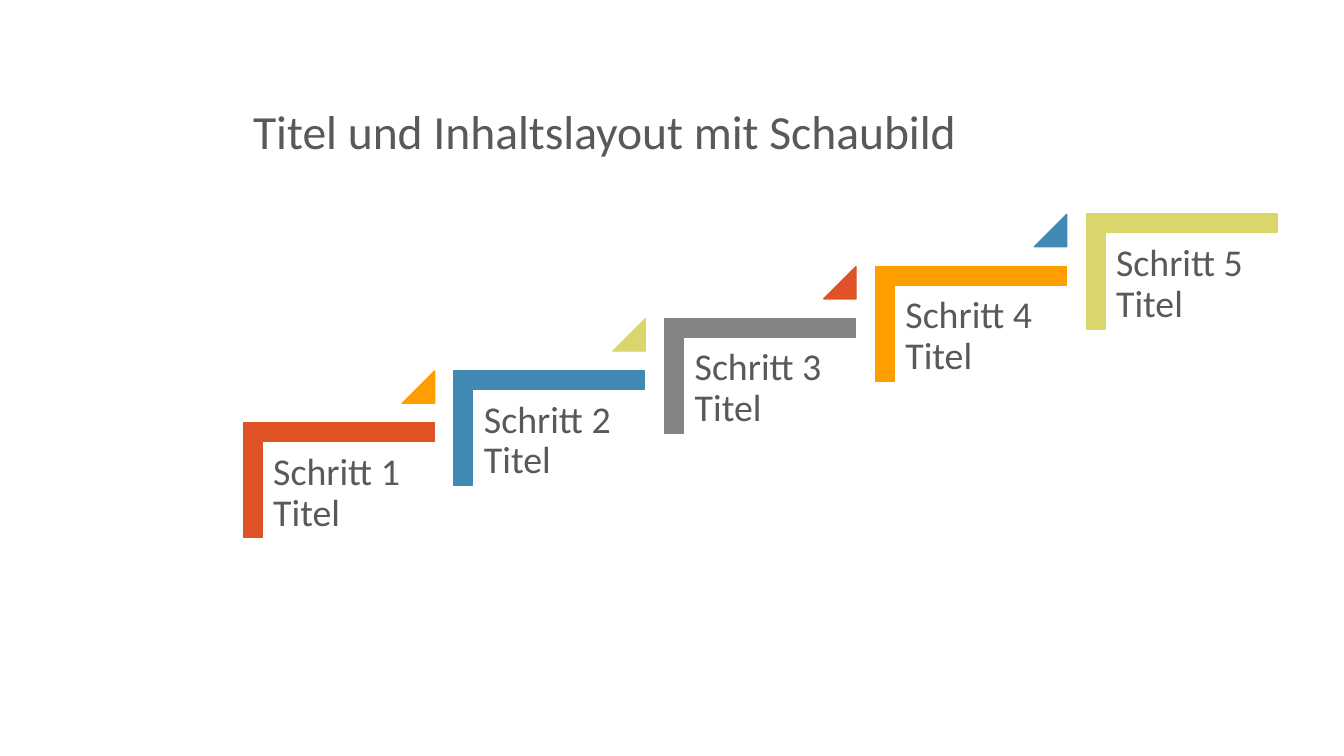
"""Build a slide with five rising diagram steps."""
import dataclasses

import pptx
import pptx.dml.color
import pptx.enum.shapes
import pptx.enum.text
import pptx.util

Inches = pptx.util.Inches
Color = pptx.dml.color.RGBColor.from_string
Shape = pptx.enum.shapes.MSO_SHAPE
Anchor = pptx.enum.text.MSO_ANCHOR


@dataclasses.dataclass(frozen=True)
class Theme:
    font: str = "Calibri"
    ink: str = "595959"
    title: int = 34
    label: int = 27
    steps: tuple = ("DF5327", "418AB3", "838383", "FE9E00", "D9D66D")
    marks: tuple = ("FE9E00", "D9D66D", "DF5327", "418AB3")


theme = Theme()


def write(box, text, size, anchor=Anchor.TOP, side=0.11, edge=0.11):
    frame = box.text_frame
    frame.word_wrap = True
    frame.auto_size = pptx.enum.text.MSO_AUTO_SIZE.NONE
    frame.vertical_anchor = anchor
    frame.margin_left = frame.margin_right = Inches(side)
    frame.margin_top = frame.margin_bottom = Inches(edge)
    para = frame.paragraphs[0]
    para.text = text
    para.alignment = pptx.enum.text.PP_ALIGN.LEFT
    para.line_spacing = 0.9
    for run in para.runs:
        run.font.name = theme.font
        run.font.size = pptx.util.Pt(size)
        run.font.color.rgb = Color(theme.ink)


def draw(group, kind, place, color, adjust):
    shape = group.shapes.add_shape(kind, *map(Inches, place))
    shape.shadow.inherit = False
    shape.fill.solid()
    shape.fill.fore_color.rgb = Color(color)
    shape.line.color.rgb = Color(color)
    shape.line.width = pptx.util.Pt(1)
    for i, value in enumerate(adjust):
        shape.adjustments[i] = value
    return shape


deck = pptx.Presentation()
deck.slide_width, deck.slide_height = Inches(13.33), Inches(7.5)
slide = deck.slides.add_slide(deck.slide_layouts[5])

title = slide.shapes.title
title.left, title.top = Inches(2.41), Inches(0.33)
title.width, title.height = Inches(10.25), Inches(1.31)
write(title, "Titel und Inhaltslayout mit Schaubild", theme.title,
      anchor=Anchor.BOTTOM, side=0.1, edge=0.05)

stairs = slide.shapes.add_group_shape()
run_x = 2.09
rise = (3.82 - 1.75) / 4
for i, color in enumerate(theme.steps):
    dx, dy = i * run_x, i * rise
    corner = draw(stairs, Shape.CORNER, (2.79 + dx, 3.82 - dy, 1.14, 1.89),
                  color, (0.161, 0.161))
    corner.rotation = 90
    label = stairs.shapes.add_textbox(
        Inches(2.6 + dx), Inches(4.38 - dy), Inches(1.71), Inches(1.5))
    write(label, f"Schritt {i + 1}\vTitel", theme.label)
    if i < len(theme.marks):
        draw(stairs, Shape.ISOSCELES_TRIANGLE,
             (3.99 + dx, 3.68 - dy, 0.32, 0.32), theme.marks[i], (1,))

deck.save("out.pptx")
